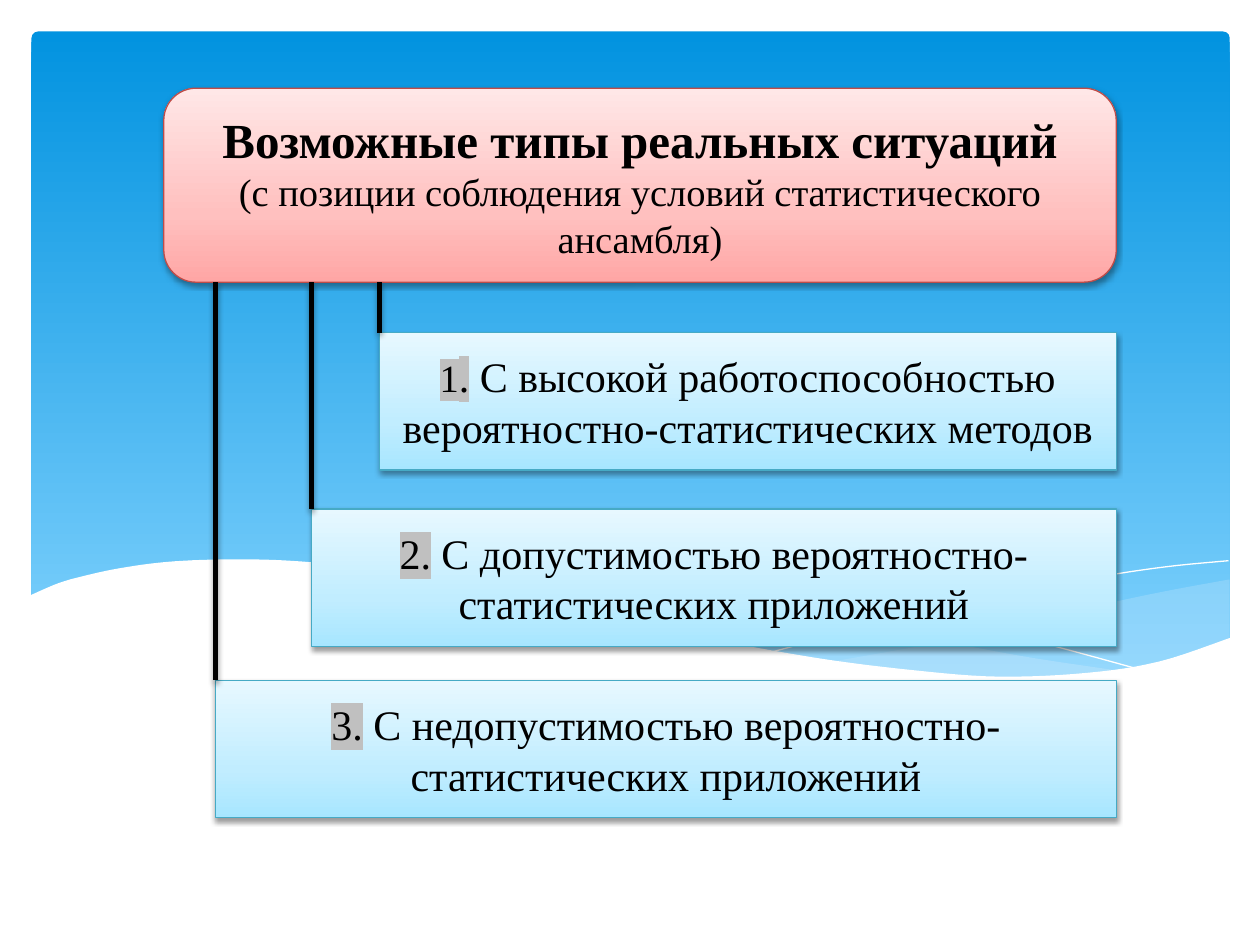
"""Build a slide on three types of situations below a heading, over a wave backdrop."""
from pptx import Presentation, oxml
from pptx import util as u
from pptx.dml import color
from pptx.enum import shapes, text
from pptx.oxml import ns

HEAD = [
    [("Возможные типы реальных ситуаций", "head", False)],
    [("(с позиции соблюдения условий статистического ансамбля)", "note", False)],
]
CARDS = [
    (30.1, 26.4, [("1", "note", True), (".", "body", True),
                  (" C высокой работоспособностью вероятностно-статистических методов", "body", False)]),
    (24.7, 40.4, [("2.", "body", True),
                  (" C допустимостью вероятностно-статистических приложений", "body", False)]),
    (17.1, 54, [("3.", "body", True),
                (" C недопустимостью вероятностно-статистических приложений", "body", False)]),
]
COLS, ROWS = 100, 75
LEFT, RIGHT, TOP, BASE, TALL = 13, 88.6, 7, 22.4, 10.9
FRAME = (2.5, 2.5, 95.1, 51.8)

THEME = {
    "sky": (90, [(0, "0293E0"), (100, "83D3FE")]),
    "rose": (270, [(0, "FFA6A5"), (35, "FFC0BF"), (100, "FFE7E7")]),
    "ice": (270, [(0, "A7E6FF"), (35, "C1EDFF"), (100, "E7F8FF")]),
    "rim": "BF4C48", "edge": "46AAC5", "veil": "C6E7FC",
    "ink": "000000", "page": "FFFFFF", "mark": "C0C0C0",
    "thin": 0.75, "stem": 3,
    "head": {"size": u.Pt(28), "bold": True},
    "note": {"size": u.Pt(22), "bold": False},
    "body": {"size": u.Pt(24), "bold": False},
    "font": "Times New Roman",
}

WAVES = [
    {"fill": "veil", "alpha": 29, "arcs": [
        [(97.5, 46), (92.1, 47), (86.1, 48.3), (77.9, 50.3), (72.9, 51.3), (66.1, 52.5)],
        [(66.1, 52.5), (71.8, 53.3), (78.1, 53.7), (84.4, 53.7), (90.5, 52.9), (97.6, 50.7)],
        [(97.6, 46)]]},
    {"fill": "veil", "alpha": 40, "arcs": [
        [(89.3, 53.3), (80.7, 52), (70.6, 50), (59.8, 47.4), (51.4, 45.8), (44.2, 44.9),
         (38, 44.6), (32.8, 44.7), (28.6, 45.2)],
        [(28.6, 45.2), (36.2, 46.3), (44.9, 48.2), (56.6, 50.9), (66.5, 52.7), (74.8, 53.6),
         (81.8, 53.9), (89.3, 53.3)]]},
    {"line": "page", "arcs": [
        [(30.9, 45.6), (35.3, 44.9), (41.6, 44.7), (48.9, 45), (58.2, 46), (69.5, 48),
         (79.5, 50.2), (90.7, 53.2)]]},
    {"line": "page", "arcs": [
        [(61.4, 51.7), (69.5, 49.6), (77.6, 47.7), (86.6, 45.9), (92.4, 45), (97.5, 44.5)]]},
    {"fill": "page", "alpha": 100, "arcs": [
        [(97.7, 50.6), (92, 52.5), (86.3, 53.4), (79.3, 53.7), (72.6, 53.2), (64.7, 52.2),
         (55.5, 50.5), (44.7, 48), (36.5, 46.2), (29.2, 45.1), (23, 44.5), (17.7, 44.4),
         (13.2, 44.6), (9.5, 45.1), (6.7, 45.7), (4.6, 46.3), (2.3, 47.3)],
        [(2.3, 58.9), (97.7, 58.9)]]},
]


def rgb(key):
    return color.RGBColor.from_string(THEME[key])


def node(xml):
    return oxml.parse_xml(xml.replace(" ", f" {ns.nsdecls('a')} ", 1))


def bend(arc, steps=6):
    """Return points of a smooth curve that passes through each point of arc."""
    if len(arc) < 3:
        return arc
    pts = [arc[0], *arc, arc[-1]]
    out = [arc[0]]
    for a, b, c, d in zip(pts, pts[1:], pts[2:], pts[3:]):
        for i in range(1, steps + 1):
            t = i / steps
            out.append(tuple(
                (2 * q + (r - p) * t + (2 * p - 5 * q + 4 * r - s) * t ** 2
                 + (3 * q - p - 3 * r + s) * t ** 3) / 2
                for p, q, r, s in zip(a, b, c, d)))
    return out


def blend(shape, key):
    angle, stops = THEME[key]
    shape.fill.solid()
    marks = "".join(f'<a:gs pos="{pos * 1000}"><a:srgbClr val="{tone}"/></a:gs>' for pos, tone in stops)
    grad = node(f'<a:gradFill rotWithShape="1"><a:gsLst>{marks}</a:gsLst>'
                f'<a:lin ang="{angle * 60000}" scaled="0"/></a:gradFill>')
    props = shape._element.spPr
    props.replace(props.find(ns.qn("a:solidFill")), grad)


def shade(shape, alpha, drop):
    props = shape._element.spPr
    props.append(node(
        f'<a:effectLst ><a:outerShdw blurRad="{u.Pt(3.1)}" dist="{u.Pt(drop)}" dir="5400000" rotWithShape="0">'
        f'<a:srgbClr val="{THEME["ink"]}"><a:alpha val="{alpha * 1000}"/></a:srgbClr>'
        '</a:outerShdw></a:effectLst>'))


def stroke(shape, key, width):
    shape.line.color.rgb = rgb(key)
    shape.line.width = u.Pt(width)


def write(shape, paras):
    frame = shape.text_frame
    for name, value in {"word_wrap": True, "vertical_anchor": text.MSO_ANCHOR.MIDDLE}.items():
        setattr(frame, name, value)
    for i, runs in enumerate(paras):
        para = frame.add_paragraph() if i else frame.paragraphs[0]
        para.alignment = text.PP_ALIGN.CENTER
        for words, style, mark in runs:
            run = para.add_run()
            run.text = words
            for name, value in {**THEME[style], "name": THEME["font"]}.items():
                setattr(run.font, name, value)
            run.font.color.rgb = rgb("ink")
            if mark:
                tint = node(f'<a:highlight ><a:srgbClr val="{THEME["mark"]}"/></a:highlight>')
                run._r.rPr.find(ns.qn("a:solidFill")).addnext(tint)


def main():
    deck = Presentation()
    deck.slide_width, deck.slide_height = u.Inches(10), u.Inches(7.5)
    tree = deck.slides.add_slide(deck.slide_layouts[6]).shapes
    kind = shapes.MSO_SHAPE

    def spot(x, y):
        return round(deck.slide_width * x / COLS), round(deck.slide_height * y / ROWS)

    def panel(form, x, y, wide, tall, fill):
        shape = tree.add_shape(form, *spot(x, y), *spot(wide, tall))
        blend(shape, fill)
        return shape

    def box(form, x, y, tall, fill, edge, paras):
        shape = panel(form, x, y, RIGHT - x, tall, fill)
        stroke(shape, edge, THEME["thin"])
        shade(shape, 38, 1.6)
        write(shape, paras)

    sky = panel(kind.ROUNDED_RECTANGLE, *FRAME, "sky")
    sky.adjustments[0] = 0.01
    sky.line.fill.background()
    sky.shadow.inherit = False

    for wave in WAVES:
        first, *rest = [spot(*p) for arc in wave["arcs"] for p in bend(arc)]
        path = tree.build_freeform(*first)
        path.add_line_segments(rest, close="fill" in wave)
        shape = path.convert_to_shape()
        shape.shadow.inherit = False
        if "fill" in wave:
            shape.fill.solid()
            shape.fill.fore_color.rgb = rgb(wave["fill"])
            tone = shape._element.spPr.find(ns.qn("a:solidFill"))[0]
            tone.append(node(f'<a:alpha val="{wave["alpha"] * 1000}"/>'))
            shape.line.fill.background()
        else:
            shape.fill.background()
            stroke(shape, wave["line"], 0)

    box(kind.ROUNDED_RECTANGLE, LEFT, TOP, BASE - TOP, "rose", "rim", HEAD)
    for x, y, runs in CARDS:
        box(kind.RECTANGLE, x, y, TALL, "ice", "edge", [runs])
        stem = tree.add_connector(shapes.MSO_CONNECTOR.STRAIGHT, *spot(x, BASE), *spot(x, y))
        stroke(stem, "ink", THEME["stem"])
        shade(stem, 35, 1.8)

    deck.save("out.pptx")


if __name__ == "__main__":
    main()
